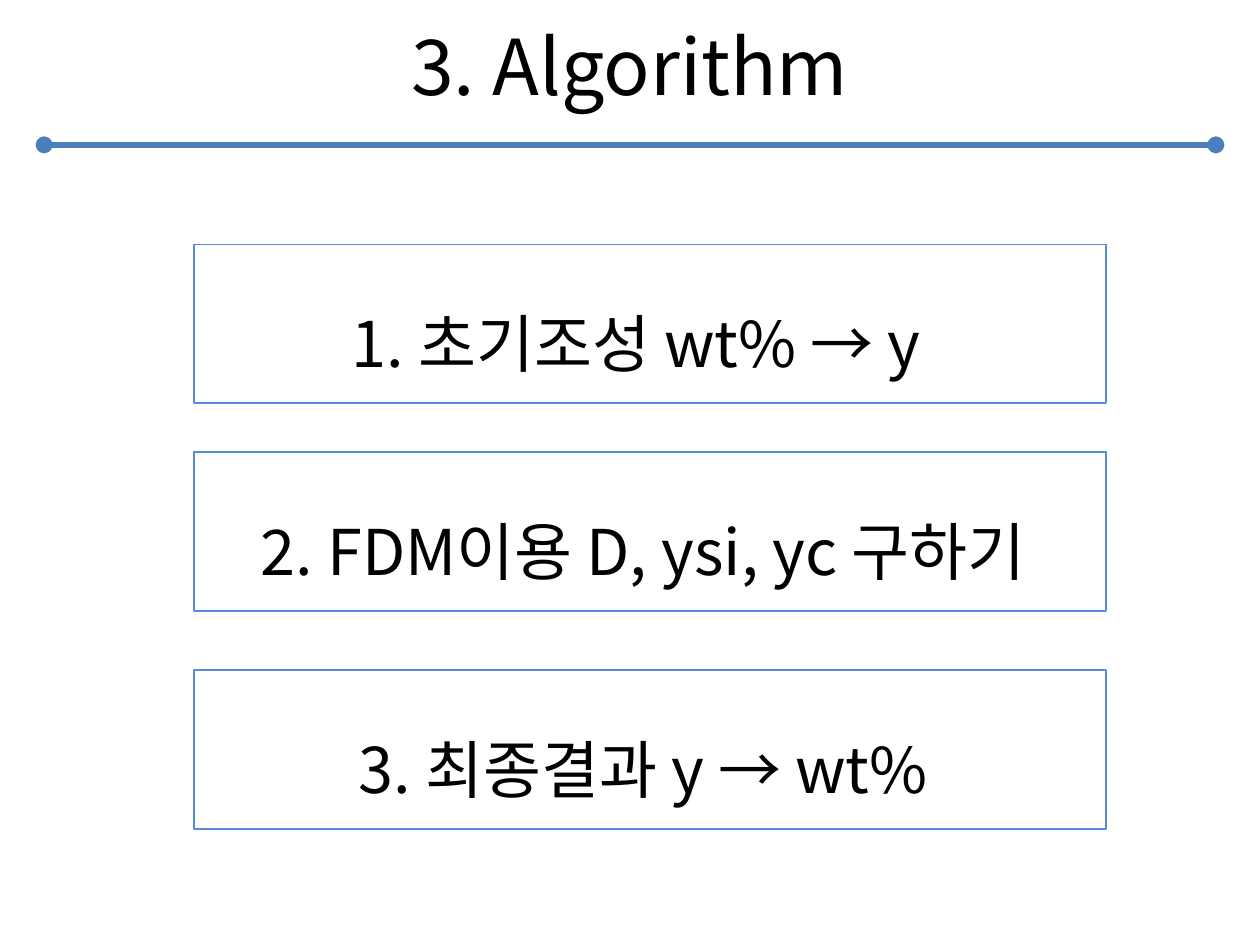
from pptx import Presentation, util as u
from pptx.dml.color import RGBColor
from pptx.enum import shapes, text
from pptx.oxml.ns import qn
from lxml import etree

TITLE = "3. Algorithm"
# wording, top edge and extra right inset, in cm
STEPS = [
    ("1. 초기조성 wt% → y", 4.93, 0.56),
    ("2. FDM이용 D, ysi, yc 구하기", 9.12, 0.28),
    ("3. 최종결과 y → wt%", 13.51, 0.28),
]
THEME = {
    "font": "Noto Sans CJK KR",
    "ink": "000000", "rule": "4B7EBC", "edge": "558ED5",
    "title": 44, "step": 36, "thick": 3.25, "thin": 1,
}
WIDE, HIGH = 25.4, 19.05
LEFT, BOX_W, BOX_H = 3.91, 18.39, 3.2
RULE_X, RULE_Y = 0.89, 2.92
INSET = 0.25


def write(shape, words, size, gap=1.0, extra=0):
    """Put one centred line in a shape; extra widens the right inset."""
    frame = shape.text_frame
    frame.word_wrap = True
    frame.vertical_anchor = text.MSO_ANCHOR.MIDDLE
    frame.margin_left, frame.margin_right = u.Cm(INSET), u.Cm(INSET + extra)
    para = frame.paragraphs[0]
    para.alignment = text.PP_ALIGN.CENTER
    para.line_spacing = gap
    run = para.add_run()
    run.text = words
    run.font.size = u.Pt(size)
    run.font.name = THEME["font"]
    run.font.color.rgb = RGBColor.from_string(THEME["ink"])
    east = etree.SubElement(run.font._element, qn("a:ea"))
    east.set("typeface", THEME["font"])


def stroke(line, color, width):
    line.color.rgb = RGBColor.from_string(color)
    line.width = u.Pt(width)


def add_rule(slide):
    rule = slide.shapes.add_connector(
        shapes.MSO_CONNECTOR.STRAIGHT, u.Cm(RULE_X), u.Cm(RULE_Y),
        u.Cm(WIDE - RULE_X), u.Cm(RULE_Y))
    stroke(rule.line, THEME["rule"], THEME["thick"])
    props = rule._element.spPr
    for end in ("a:headEnd", "a:tailEnd"):
        etree.SubElement(props.find(qn("a:ln")), qn(end)).set("type", "oval")
    etree.SubElement(props, qn("a:effectLst"))


def add_step(slide, words, top, extra):
    box = slide.shapes.add_shape(
        shapes.MSO_SHAPE.RECTANGLE,
        u.Cm(LEFT), u.Cm(top), u.Cm(BOX_W), u.Cm(BOX_H))
    box.shadow.inherit = False
    box.fill.background()
    stroke(box.line, THEME["edge"], THEME["thin"])
    write(box, words, THEME["step"], gap=1.5, extra=extra)


def main():
    deck = Presentation()
    deck.slide_width, deck.slide_height = u.Cm(WIDE), u.Cm(HIGH)
    slide = deck.slides.add_slide(deck.slide_layouts[6])
    head = slide.shapes.add_textbox(
        u.Cm(1.27), u.Cm(-0.28), u.Cm(WIDE - 2 * 1.27), u.Cm(3.18))
    write(head, TITLE, THEME["title"])
    add_rule(slide)
    for step in STEPS:
        add_step(slide, *step)
    deck.save("out.pptx")


if __name__ == "__main__":
    main()
